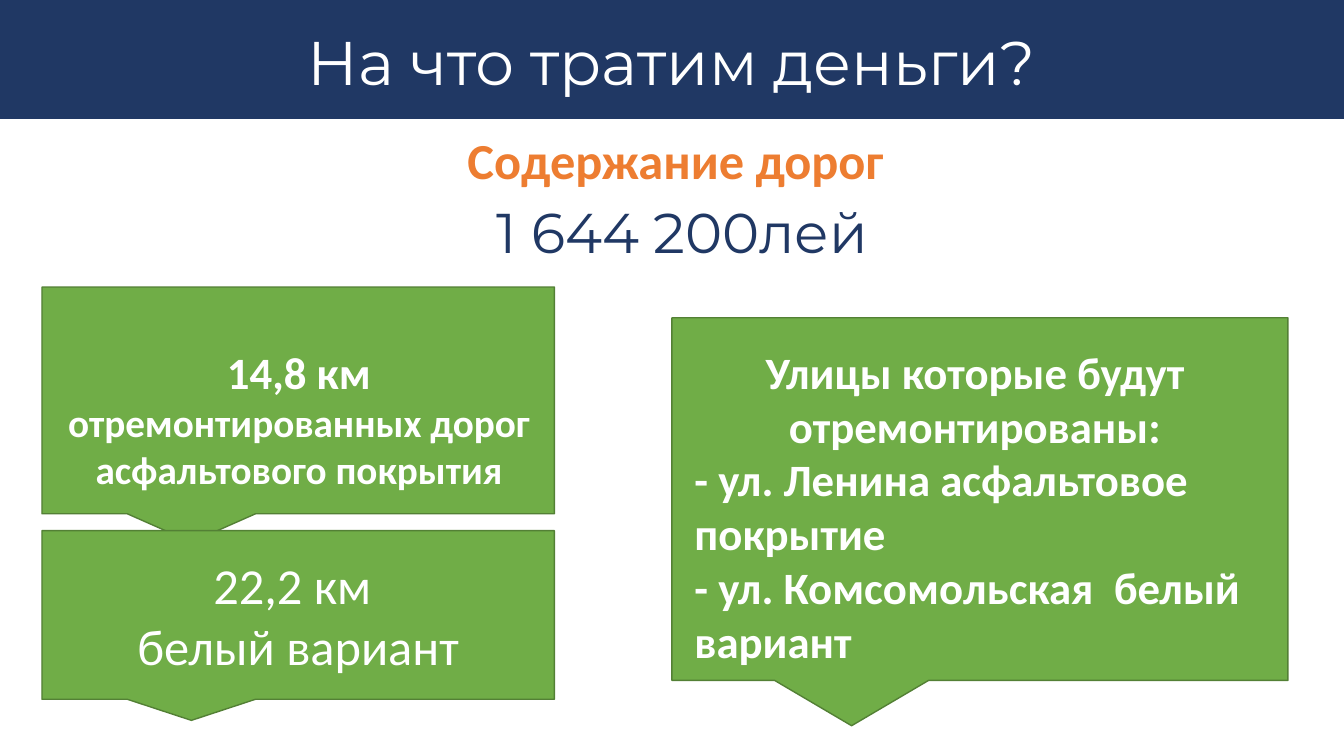
import pptx
import pptx.util
import pptx.dml.color
import pptx.enum.shapes
import pptx.enum.text
from dataclasses import dataclass

Pt = pptx.util.Pt
RGB = pptx.dml.color.RGBColor.from_string
SHAPES = pptx.enum.shapes.MSO_SHAPE
ALIGN = pptx.enum.text.PP_ALIGN
ANCHOR = pptx.enum.text.MSO_ANCHOR
AUTO_SIZE = pptx.enum.text.MSO_AUTO_SIZE


@dataclass(frozen=True)
class Theme:
    navy: str = "203864"
    orange: str = "ED7D31"
    green: str = "70AD47"
    dark_green: str = "538035"
    white: str = "FFFFFF"
    heading_font: str = "Montserrat"
    body_font: str = "Calibri"
    title: int = 44
    amount: int = 40
    topic: int = 36
    detail: int = 32
    small: int = 28


theme = Theme()
presentation = pptx.Presentation()
presentation.slide_width, presentation.slide_height = Pt(960), Pt(540)
slide = presentation.slides.add_slide(presentation.slide_layouts[6])


def add_panel(preset, left, top, width, height, fill, line=None):
    panel = slide.shapes.add_shape(preset, Pt(left), Pt(top), Pt(width), Pt(height))
    panel.shadow.inherit = False
    panel.fill.solid()
    panel.fill.fore_color.rgb = RGB(fill)
    if line:
        panel.line.color.rgb = RGB(line)
        panel.line.width = Pt(1)
    else:
        panel.line.fill.background()
    return panel


def write(frame, lines, font, size, color, bold=False):
    """Fill a text frame with (text, alignment) paragraphs in one style."""
    frame.word_wrap = True
    for index, (text, alignment) in enumerate(lines):
        paragraph = frame.add_paragraph() if index else frame.paragraphs[0]
        paragraph.text = text
        paragraph.alignment = alignment
        paragraph.font.name = font
        paragraph.font.size = Pt(size)
        paragraph.font.bold = bold
        paragraph.font.color.rgb = RGB(color)


# Title band
add_panel(SHAPES.RECTANGLE, 0, 0, 960, 85, theme.navy)
title = slide.shapes.add_textbox(Pt(12), Pt(18), Pt(936), Pt(58)).text_frame
title.vertical_anchor = ANCHOR.MIDDLE
write(title, [("На что тратим деньги?", ALIGN.CENTER)],
      theme.heading_font, theme.title, theme.white)
title.paragraphs[0].line_spacing = 0.9

# Green callouts
callouts = [
    add_panel(SHAPES.RECTANGULAR_CALLOUT, *place, theme.green, theme.dark_green)
    for place in [(30, 205, 366, 162), (480, 227, 440, 259), (30, 379, 366, 120.5)]
]
white_road = callouts[-1].text_frame
white_road.vertical_anchor = ANCHOR.MIDDLE
write(white_road, [("22,2 км ", ALIGN.CENTER), ("белый вариант", ALIGN.CENTER)],
      theme.body_font, theme.topic, theme.white)

# Free-standing texts: place, paragraphs, font, size, colour, bold
texts = [
    ((230, 137.5, 504, 55.5), [(" 1 644 200лей", ALIGN.CENTER)],
     theme.heading_font, theme.amount, theme.navy, False),
    ((16.5, 88.5, 932, 51), [("Содержание дорог", ALIGN.CENTER)],
     theme.body_font, theme.topic, theme.orange, True),
    ((39.5, 242.5, 348, 114), [("14,8 км ", ALIGN.CENTER)],
     theme.body_font, theme.detail, theme.white, True),
    ((489, 242.5, 415, 242),
     [("Улицы которые будут отремонтированы:", ALIGN.CENTER),
      ("- ул. Ленина асфальтовое покрытие\v- ул. Комсомольская  белый вариант",
       ALIGN.LEFT)],
     theme.body_font, theme.detail, theme.white, True),
]
frames = []
for place, *style in texts:
    frame = slide.shapes.add_textbox(*map(Pt, place)).text_frame
    frame.auto_size = AUTO_SIZE.SHAPE_TO_FIT_TEXT
    write(frame, *style)
    frames.append(frame)

# The asphalt text goes on in a smaller size after its figure
asphalt = frames[2].paragraphs[0].add_run()
asphalt.text = "отремонтированных дорог асфальтового покрытия"
asphalt.font.size = Pt(theme.small)

presentation.save("out.pptx")
